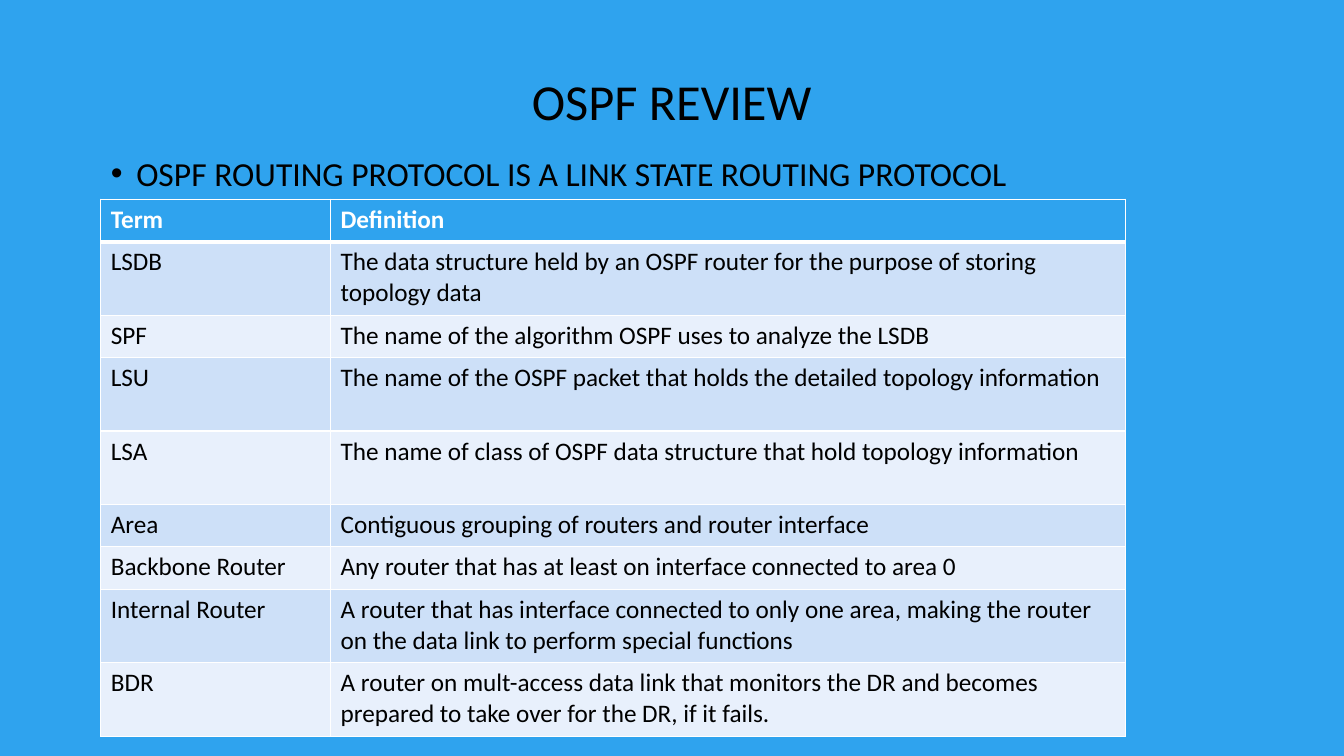
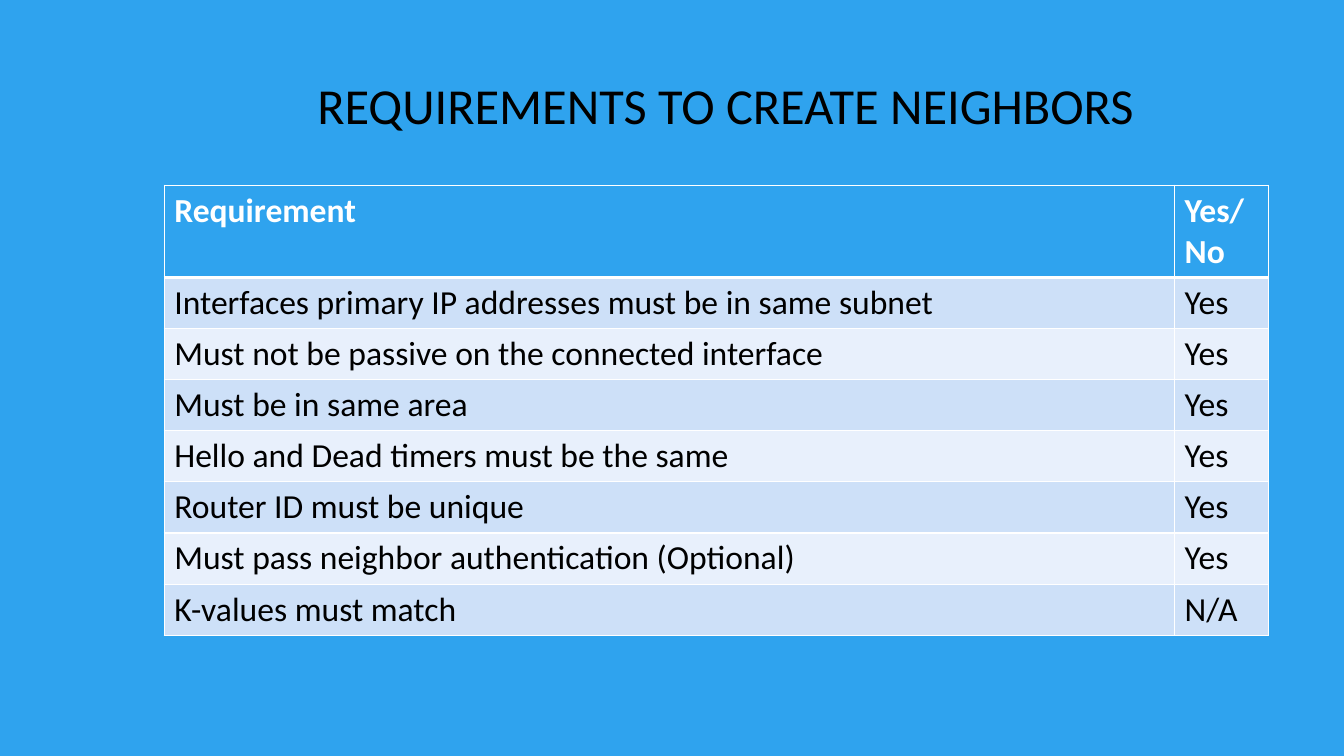
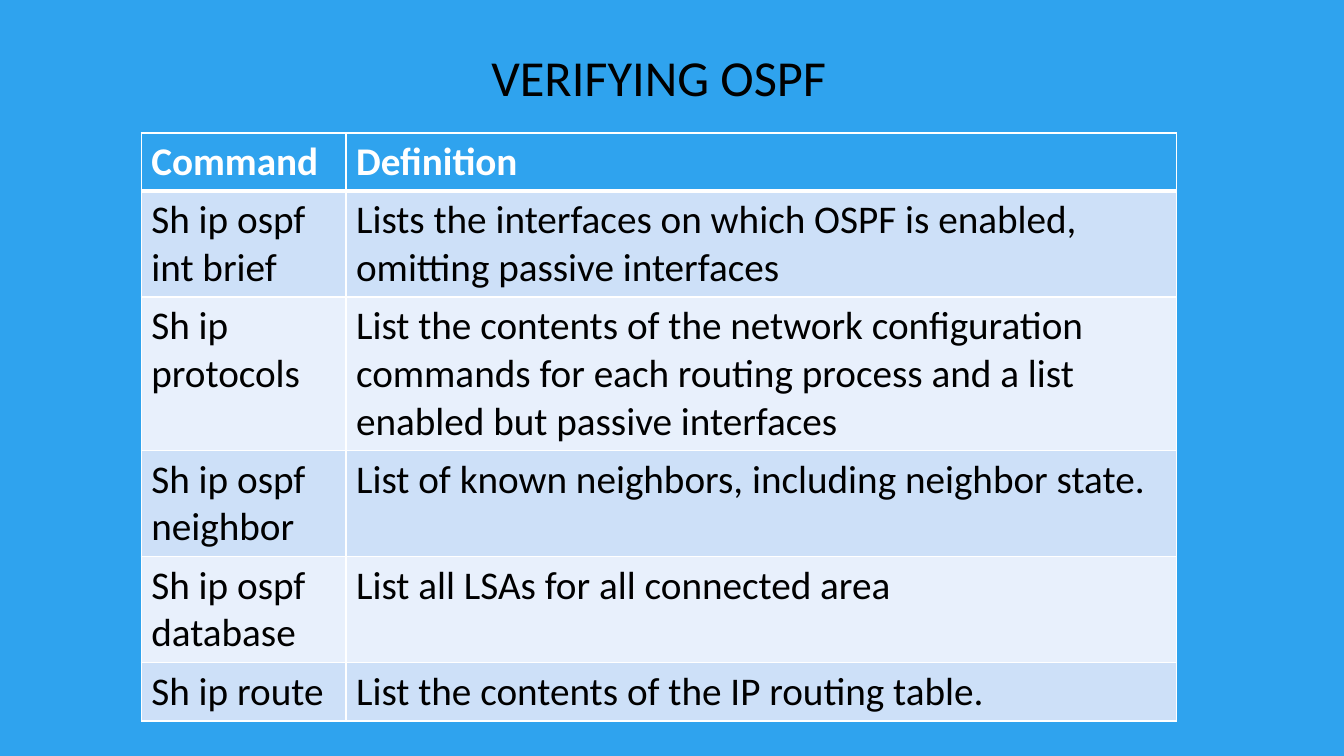
import pptx
import pptx.dml.color
import pptx.enum.text
import pptx.oxml
import pptx.oxml.ns
import pptx.util

Cm = pptx.util.Cm
Pt = pptx.util.Pt
COLOURS = {
    "sky": "2FA3EE",
    "text": "000000",
    "white": "FFFFFF",
    "odd_row": "CDE0F8",
    "even_row": "E8F0FC",
}
NAMESPACE = pptx.oxml.ns.nsdecls("a")


def colour(name):
    """Return the named colour as an RGBColor."""
    return pptx.dml.color.RGBColor.from_string(COLOURS[name])


def write(para, text, size=18, shade="text", bold=False, align=None, spacing=None):
    """Put formatted text into a paragraph."""
    para.alignment = align
    para.line_spacing = spacing
    para.space_before = Pt(0)
    span = para.add_run()
    span.text = text
    span.font.name = "Calibri"
    span.font.size = Pt(size)
    span.font.bold = bold
    span.font.color.rgb = colour(shade)


class Deck:
    """Hold the shared style and the current slide."""

    def __init__(self):
        """Start a wide presentation with a plain background."""
        self.deck = pptx.Presentation()
        self.deck.slide_width = Cm(33.87)
        self.deck.slide_height = Cm(19.05)
        fill = self.deck.slide_master.background.fill
        fill.solid()
        fill.fore_color.rgb = colour("sky")
        self.page = None

    def add_page(self, title, place, layout="Title Only"):
        """Start a slide and write its centred title."""
        self.page = self.deck.slides.add_slide(self.deck.slide_layouts.get_by_name(layout))
        box = self.page.shapes.title
        self.prepare(box, place, pptx.enum.text.MSO_ANCHOR.MIDDLE)
        write(box.text_frame.paragraphs[0], title, size=36, spacing=0.9,
              align=pptx.enum.text.PP_ALIGN.CENTER)

    def prepare(self, box, place, anchor):
        """Move a placeholder and fix its text frame."""
        box.left, box.top, box.width, box.height = map(Cm, place)
        box.text_frame.word_wrap = True
        box.text_frame.auto_size = pptx.enum.text.MSO_AUTO_SIZE.NONE
        box.text_frame.vertical_anchor = anchor

    def add_bullet(self, text, place):
        """Write a bulleted line in the body placeholder."""
        box = self.page.placeholders[1]
        self.prepare(box, place, pptx.enum.text.MSO_ANCHOR.TOP)
        para = box.text_frame.paragraphs[0]
        properties = para._p.get_or_add_pPr()
        properties.set("marL", str(Cm(0.64)))
        properties.set("indent", str(-Cm(0.64)))
        for xml in (
            f'<a:buClr {NAMESPACE}><a:srgbClr val="{COLOURS["text"]}"/></a:buClr>',
            f'<a:buFont {NAMESPACE} typeface="Arial"/>',
            f'<a:buChar {NAMESPACE} char="•"/>',
        ):
            properties.append(pptx.oxml.parse_xml(xml))
        write(para, text, size=24, spacing=1.2)

    def add_table(self, rows, corner, widths, heights, size):
        """Draw a table with a heading row and alternating rows."""
        left, top = map(Cm, corner)
        table = self.page.shapes.add_table(
            len(rows), len(widths), left, top, Cm(sum(widths)), Cm(sum(heights))
        ).table
        for column, width in zip(table.columns, widths):
            column.width = Cm(width)
        for index, (texts, height) in enumerate(zip(rows, heights)):
            table.rows[index].height = Cm(height)
            heading = index == 0
            shade = "sky" if heading else ("even_row", "odd_row")[index % 2]
            for column, text in enumerate(texts):
                cell = table.cell(index, column)
                cell.fill.solid()
                cell.fill.fore_color.rgb = colour(shade)
                self.add_borders(cell, top=3 if index == 1 else 1, bottom=3 if heading else 1)
                write(cell.text_frame.paragraphs[0], text, size=size, bold=heading,
                      shade="white" if heading else "text")

    def add_borders(self, cell, top, bottom):
        """Give a cell white borders with the given line widths."""
        properties = cell._tc.get_or_add_tcPr()
        for position, (side, width) in enumerate(zip("LRTB", (1, 1, top, bottom))):
            properties.insert(position, pptx.oxml.parse_xml(
                f'<a:ln{side} {NAMESPACE} w="{Pt(width)}"><a:solidFill>'
                f'<a:srgbClr val="{COLOURS["white"]}"/></a:solidFill></a:ln{side}>'
            ))


def main():
    """Build the three slides and save them."""
    show = Deck()

    show.add_page("OSPF REVIEW", (2.54, 1.73, 28.78, 1.8), layout="Title and Content")
    show.add_bullet("OSPF ROUTING PROTOCOL IS A LINK STATE ROUTING PROTOCOL",
                    (2.54, 3.51, 28.78, 1.02))
    terms = [
        ("Term", "Definition"),
        ("LSDB", "The data structure held by an OSPF router for the purpose of storing topology data"),
        ("SPF", "The name of the algorithm OSPF uses to analyze the LSDB"),
        ("LSU", "The name of the OSPF packet that holds the detailed topology information"),
        ("LSA", "The name of class of OSPF data structure that hold topology information"),
        ("Area", "Contiguous grouping of routers and router interface"),
        ("Backbone Router", "Any router that has at least on interface connected to area 0"),
        ("Internal Router", "A router that has interface connected to only one area, making the router "
                            "on the data link to perform special functions"),
        ("BDR", "A router on mult-access data link that monitors the DR and becomes "
                "prepared to take over for the DR, if it fails."),
    ]
    single, double = 1.07, 1.85
    show.add_table(terms, (2.54, 5.02), (5.79, 20.04),
                   (single, double, single, double, double, single, single, double, double), size=18)

    show.add_page("REQUIREMENTS TO CREATE NEIGHBORS", (4.37, 0.28, 27.84, 4.88))
    requirements = [
        ("Requirement", "Yes/No"),
        ("Interfaces primary IP addresses must be in same subnet", "Yes"),
        ("Must not be passive on the connected interface", "Yes"),
        ("Must be in same area", "Yes"),
        ("Hello and Dead timers must be the same", "Yes"),
        ("Router ID must be unique", "Yes"),
        ("Must pass neighbor authentication (Optional)", "Yes"),
        ("K-values must match", "N/A"),
    ]
    show.add_table(requirements, (4.14, 4.67), (25.46, 2.37), [2.3] + [1.28] * 7, size=24)

    show.add_page("VERIFYING OSPF", (3.56, 0.99, 26.09, 2.08))
    commands = [
        ("Command", "Definition"),
        ("Sh ip ospf int brief", "Lists the interfaces on which OSPF is enabled, omitting passive interfaces"),
        ("Sh ip protocols", "List the contents of the network configuration commands for each routing "
                            "process and a list enabled but passive interfaces"),
        ("Sh ip ospf neighbor", "List of known neighbors, including neighbor state."),
        ("Sh ip ospf database", "List all LSAs for all connected area"),
        ("Sh ip route", "List the contents of the IP routing table."),
    ]
    show.add_table(commands, (3.56, 3.35), (5.16, 20.93), (1.45, 2.67, 3.87, 2.67, 2.67, 1.47), size=28)

    show.deck.save("out.pptx")


if __name__ == "__main__":
    main()
